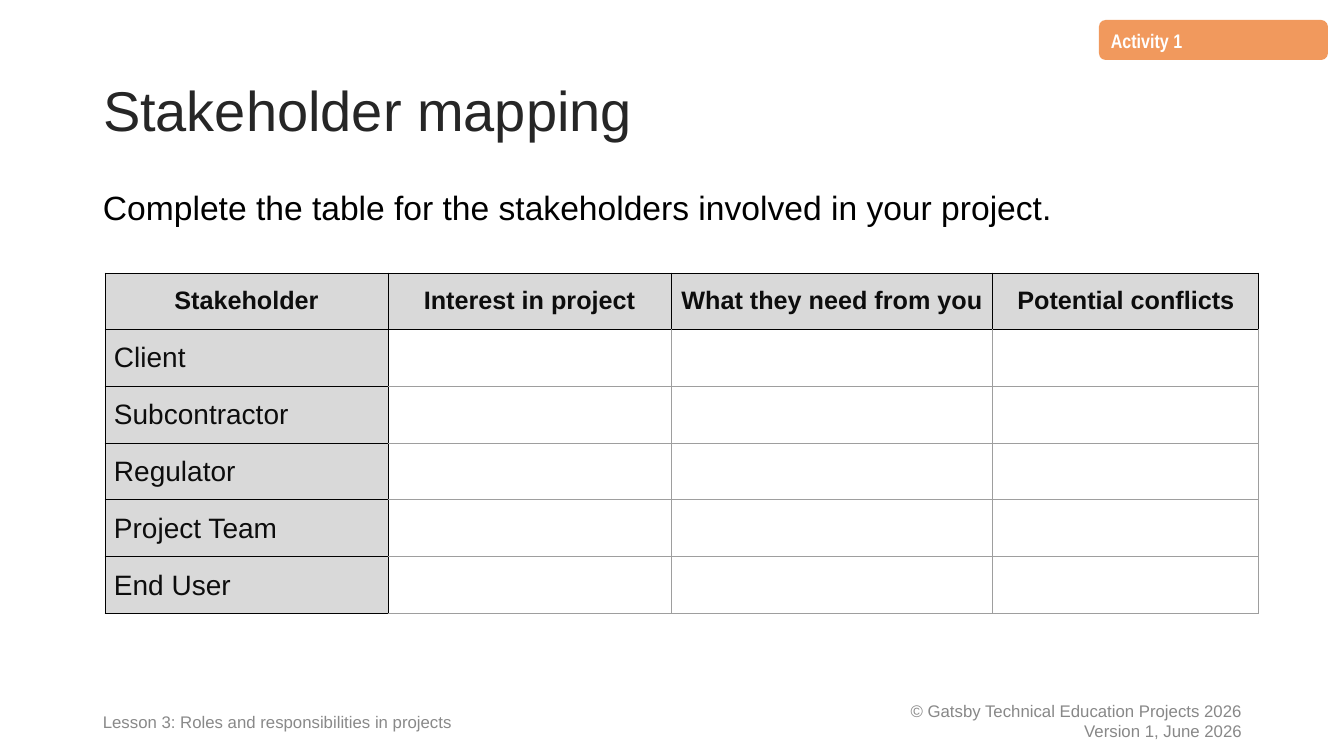
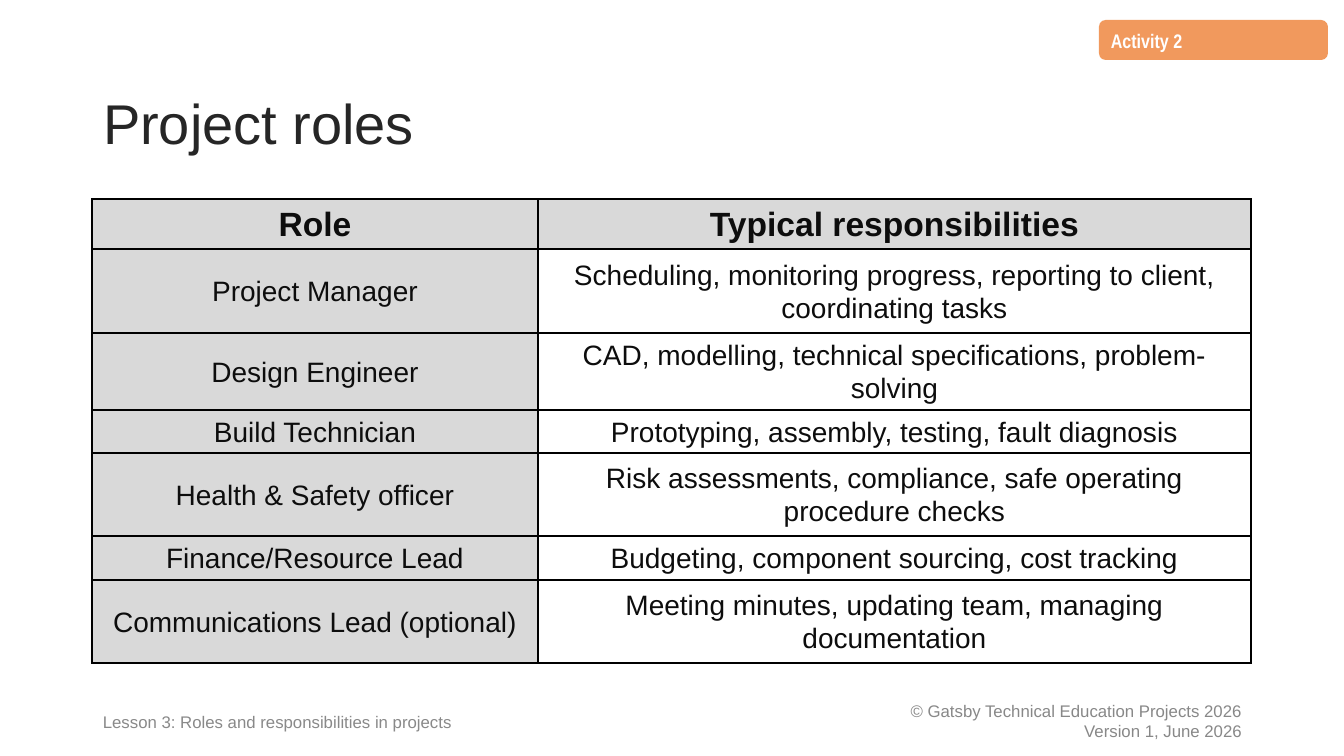
from lxml.etree import SubElement
from pptx import Presentation
from pptx.dml.color import RGBColor
from pptx.enum.shapes import MSO_SHAPE
from pptx.enum.text import MSO_ANCHOR, PP_ALIGN
from pptx.oxml.ns import qn
from pptx.util import Emu, Pt

EMU_PER_PX = 914400 / 100.8
SLIDE_SIZE = (1344, 756)

WHITE = "FFFFFF"
BLACK = "000000"
TITLE_COLOUR = "262626"
CELL_TEXT = "0D0D0D"
HEADING_FILL = "D9D9D9"
GRID_GREY = "9E9E9E"
LESSON_GREY = "898989"
COPYRIGHT_GREY = "888888"
ACTIVITY_ORANGE = "F1995D"

LESSON_BOX = (93, 701, 464, 40)
COPYRIGHT_BOX = (798, 701, 454, 40)
ACTIVITY_BOX = (1099, 20, 229, 40)

STAKEHOLDERS = [
    ["Stakeholder", "Interest in project", "What they need from you", "Potential conflicts"],
    ["Client", "", "", ""],
    ["Subcontractor", "", "", ""],
    ["Regulator", "", "", ""],
    ["Project Team", "", "", ""],
    ["End User", "", "", ""],
]
ROLES = [
    ["Role", "Typical responsibilities"],
    ["Project Manager",
     "Scheduling, monitoring progress, reporting to client, coordinating tasks"],
    ["Design Engineer", "CAD, modelling, technical specifications, problem-solving"],
    ["Build Technician", "Prototyping, assembly, testing, fault diagnosis"],
    ["Health & Safety officer",
     "Risk assessments, compliance, safe operating procedure checks"],
    ["Finance/Resource Lead", "Budgeting, component sourcing, cost tracking"],
    ["Communications Lead (optional)",
     "Meeting minutes, updating team, managing documentation"],
]


def px(length):
    return Emu(round(length * EMU_PER_PX))


def colour(hex_string):
    return RGBColor.from_string(hex_string)


def write_text(text_frame, text, size, hex_string, font="Arial", bold=False,
               align=PP_ALIGN.LEFT, line_spacing=1.0):
    text_frame.text = text
    text_frame.word_wrap = True
    for paragraph in text_frame.paragraphs:
        paragraph.alignment = align
        paragraph.line_spacing = line_spacing
        for run in paragraph.runs:
            run.font.name = font
            run.font.size = Pt(size)
            run.font.bold = bold
            run.font.color.rgb = colour(hex_string)


def add_text(slide, box, text, size, hex_string, anchor=MSO_ANCHOR.MIDDLE, **style):
    shape = slide.shapes.add_textbox(*map(px, box))
    shape.text_frame.vertical_anchor = anchor
    write_text(shape.text_frame, text, size, hex_string, **style)


def add_activity_label(slide, box, text):
    shape = slide.shapes.add_shape(MSO_SHAPE.FLOWCHART_ALTERNATE_PROCESS, *map(px, box))
    shape.shadow.inherit = False
    shape.fill.solid()
    shape.fill.fore_color.rgb = colour(ACTIVITY_ORANGE)
    shape.line.fill.background()
    shape.text_frame.vertical_anchor = MSO_ANCHOR.MIDDLE
    write_text(shape.text_frame, text, 14, WHITE, font="Arial Narrow", bold=True,
               line_spacing=1.08)


def add_activity_slide(presentation, title, title_box, activity):
    """Add a slide with its title, activity label and both footers."""
    slide = presentation.slides.add_slide(presentation.slide_layouts[5])
    heading = slide.shapes.title
    heading.left, heading.top, heading.width, heading.height = map(px, title_box)
    heading.text_frame.vertical_anchor = MSO_ANCHOR.MIDDLE
    write_text(heading.text_frame, title, 40, TITLE_COLOUR, line_spacing=0.9)
    add_activity_label(slide, ACTIVITY_BOX, activity)
    add_text(slide, LESSON_BOX, "Lesson 3: Roles and responsibilities in projects",
             12, LESSON_GREY, line_spacing=1.08)
    add_text(slide, COPYRIGHT_BOX,
             "© Gatsby Technical Education Projects 2026\nVersion 1, June 2026",
             12, COPYRIGHT_GREY, align=PP_ALIGN.RIGHT)
    return slide


def set_borders(cell, edges, width):
    """Draw the left, right, top and bottom edges in the given colours."""
    properties = cell._tc.get_or_add_tcPr()
    for side, hex_string in zip("LRTB", edges):
        line = SubElement(properties, qn(f"a:ln{side}"), w=str(Pt(width)))
        fill = SubElement(line, qn("a:solidFill"))
        SubElement(fill, qn("a:srgbClr"), val=hex_string)


def add_grid(slide, origin, column_widths, row_heights, rows, header_size, border_width,
             body_border, margins, stub_align=PP_ALIGN.CENTER, stub_margin=None,
             line_spacing=1.0):
    """Add a table whose header row and first column (the stub) are shaded."""
    size = (sum(column_widths), sum(row_heights))
    table = slide.shapes.add_table(len(rows), len(column_widths),
                                   *map(px, origin + size)).table
    table.first_row = table.horz_banding = False
    for column, width in zip(table.columns, column_widths):
        column.width = px(width)
    for row, height in zip(table.rows, row_heights):
        row.height = px(height)

    side_margin, end_margin = margins
    for row_index, texts in enumerate(rows):
        for column_index, text in enumerate(texts):
            cell = table.cell(row_index, column_index)
            is_header = row_index == 0
            is_stub = column_index == 0 and not is_header
            shaded = is_header or is_stub
            inner = BLACK if shaded else body_border
            left = BLACK if column_index <= 1 else inner
            top = BLACK if row_index <= 1 else inner
            set_borders(cell, (left, inner, top, inner), border_width)
            cell.fill.solid()
            cell.fill.fore_color.rgb = colour(HEADING_FILL if shaded else WHITE)
            cell.vertical_anchor = MSO_ANCHOR.MIDDLE
            cell.margin_left = cell.margin_right = px(side_margin)
            cell.margin_top = cell.margin_bottom = px(end_margin)
            if is_stub and stub_margin is not None:
                cell.margin_left = px(stub_margin)
            if text:
                write_text(cell.text_frame, text, header_size if is_header else 20,
                           CELL_TEXT, bold=is_header, line_spacing=line_spacing,
                           align=stub_align if is_stub else PP_ALIGN.CENTER)


def add_stakeholder_slide(presentation):
    slide = add_activity_slide(presentation, "Stakeholder mapping",
                               (93, 40, 1159, 146), "Activity 1")
    add_text(slide, (93, 182, 1007, 50),
             "Complete the table for the stakeholders involved in your project.",
             24, BLACK, anchor=MSO_ANCHOR.TOP)
    add_grid(slide, (105, 273), [283, 283, 322, 266], [56] + [57] * 5, STAKEHOLDERS,
             header_size=18, border_width=0.75, body_border=GRID_GREY, margins=(1, 1),
             stub_align=PP_ALIGN.LEFT, stub_margin=9)


def add_roles_slide(presentation):
    slide = add_activity_slide(presentation, "Project roles",
                               (93, 53, 1159, 146), "Activity 2")
    add_grid(slide, (92, 199), [446, 713], [50, 84, 77, 43, 83, 44, 83], ROLES,
             header_size=24, border_width=1.5, body_border=BLACK, margins=(10, 2),
             line_spacing=1.07)


def main():
    presentation = Presentation()
    presentation.slide_width, presentation.slide_height = map(px, SLIDE_SIZE)
    add_stakeholder_slide(presentation)
    add_roles_slide(presentation)
    presentation.save("out.pptx")


if __name__ == "__main__":
    main()
